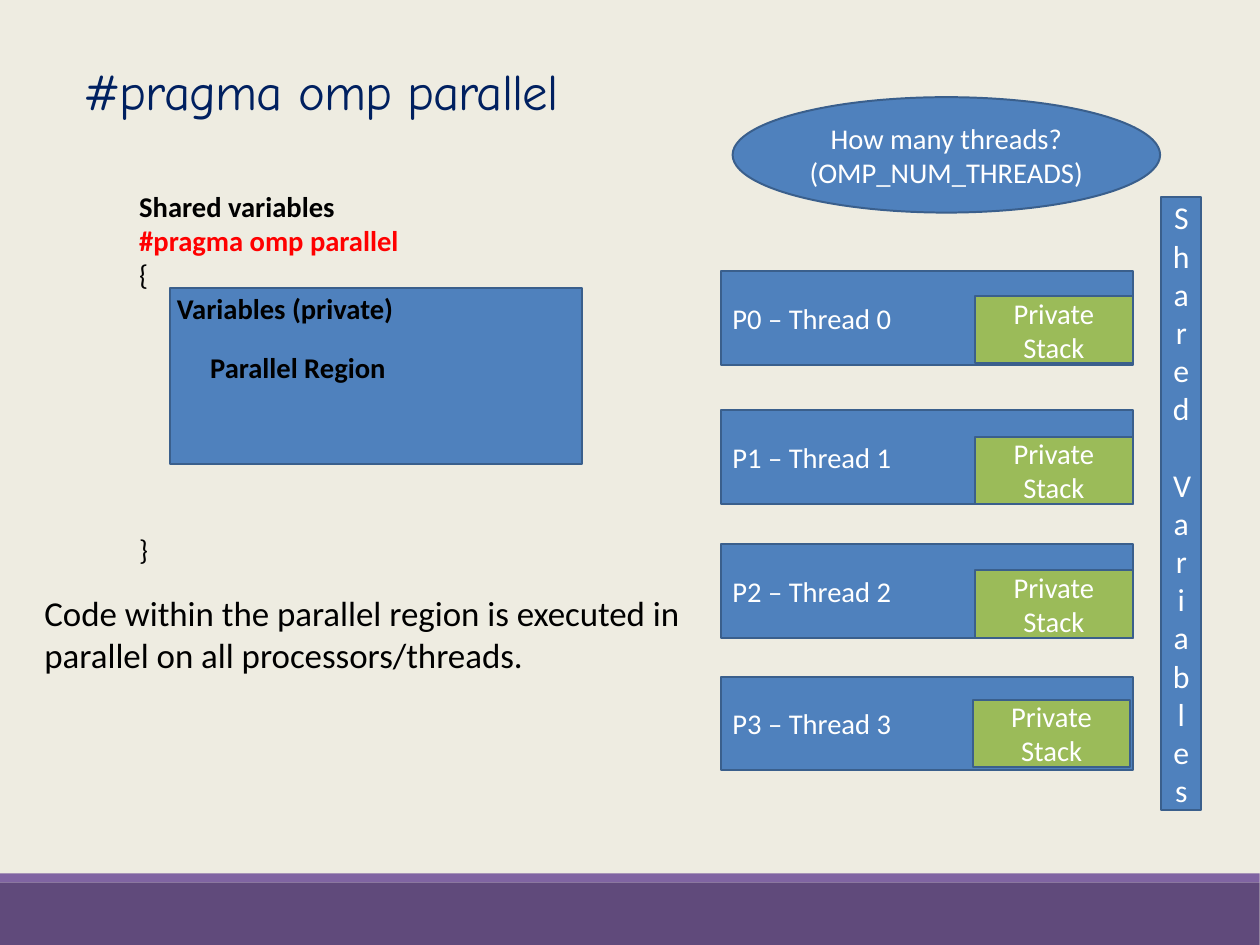
"""Build the slide explaining the OpenMP parallel pragma."""
from pptx import Presentation
from pptx.dml.color import RGBColor
from pptx.enum.shapes import MSO_SHAPE
from pptx.enum.text import MSO_ANCHOR, PP_ALIGN
from pptx.util import Inches, Pt

COLORS = {
    "background": "EEECE1", "footer": "604A7B", "footer_edge": "8064A2",
    "title": "002060", "block": "4F81BD", "outline": "3A5F8C",
    "stack": "9BBB59", "pragma": "FF0000", "black": "000000", "white": "FFFFFF",
}
BODY = {"name": "Calibri", "size": Pt(18), "bold": False}
BOLD = {**BODY, "bold": True}

deck = Presentation()
deck.slide_width, deck.slide_height = Inches(28 / 2.54), Inches(21 / 2.54)
slide = deck.slides.add_slide(deck.slide_layouts[6])
slide.background.fill.solid()
slide.background.fill.fore_color.rgb = RGBColor.from_string(COLORS["background"])


def add_block(box, fill, outline="outline", preset=MSO_SHAPE.RECTANGLE):
    block = slide.shapes.add_shape(preset, *map(Inches, box))
    block.shadow.inherit = False
    block.fill.solid()
    block.fill.fore_color.rgb = RGBColor.from_string(COLORS[fill])
    if outline:
        block.line.color.rgb = RGBColor.from_string(COLORS[outline])
        block.line.width = Pt(1.25)
    else:
        block.line.fill.background()
    return block


def write(holder, lines, style, color, align=PP_ALIGN.LEFT, anchor=MSO_ANCHOR.MIDDLE):
    frame = holder.text_frame
    frame.word_wrap = True
    frame.vertical_anchor = anchor
    for index, line in enumerate(lines):
        paragraph = frame.paragraphs[0] if index == 0 else frame.add_paragraph()
        paragraph.alignment = align
        run = paragraph.add_run()
        run.text = line
        run.font.color.rgb = RGBColor.from_string(COLORS[color])
        for attribute, value in style.items():
            setattr(run.font, attribute, value)
    return frame.paragraphs


add_block((0, 7.72, 11.02, 0.55), "footer", None)
add_block((0, 7.64, 11.02, 0.08), "footer_edge", None)

title = slide.shapes.add_textbox(*map(Inches, (0.63, 0.55, 9, 0.56)))
heading = write(title, ["#pragma omp parallel"], {"name": "Comic Neue", "size": Pt(32)}, "title")[0]
heading.line_spacing = 0.85
heading.runs[0].font._element.set("spc", "-60")

add_block((1.49, 2.52, 3.6, 1.54), "block")
region = slide.shapes.add_textbox(*map(Inches, (1.74, 3.01, 2.81, 0.4)))
write(region, ["Parallel Region"], BOLD, "black", anchor=MSO_ANCHOR.TOP)

question = add_block((6.41, 0.85, 3.74, 1.01), "block", preset=MSO_SHAPE.OVAL)
write(question, ["How many threads? (OMP_NUM_THREADS)"], BODY, "white", PP_ALIGN.CENTER)

thread_rows = [(2.37, 8.53, 2.59), (3.59, 8.53, 3.82), (4.76, 8.53, 4.99), (5.92, 8.51, 6.12)]
for number, (top, stack_left, stack_top) in enumerate(thread_rows):
    thread = add_block((6.31, top, 3.6, 0.82), "block")
    write(thread, [f"P{number} – Thread {number}"], BODY, "white")
    stack = add_block((stack_left, stack_top, 1.38, 0.59), "stack")
    write(stack, ["Private Stack"], BODY, "white", PP_ALIGN.CENTER)

shared = add_block((10.16, 1.72, 0.35, 5.37), "block")
words = write(shared, ["Shared", "Variables"], {**BODY, "size": Pt(20)}, "white", PP_ALIGN.CENTER)
words[1].space_before = Pt(24.4)

summary = slide.shapes.add_textbox(*map(Inches, (0.29, 5.13, 5.91, 0.84)))
write(summary, ["Code within the parallel region is executed in parallel on all processors/threads."],
      {**BODY, "size": Pt(22)}, "black", anchor=MSO_ANCHOR.TOP)

code = slide.shapes.add_textbox(*map(Inches, (1.12, 1.6, 4.4, 3.43)))
code_lines = write(code, ["Shared variables", "#pragma omp parallel", "{", "Variables (private)", "}"],
                   BOLD, "black", anchor=MSO_ANCHOR.TOP)
code_lines[1].runs[0].font.color.rgb = RGBColor.from_string(COLORS["pragma"])
for brace in (code_lines[2], code_lines[4]):
    brace.runs[0].font.bold = False
code_lines[3]._p.get_or_add_pPr().set("marL", str(Inches(0.33)))
code_lines[4].space_before = Pt(130)

deck.save("out.pptx")
